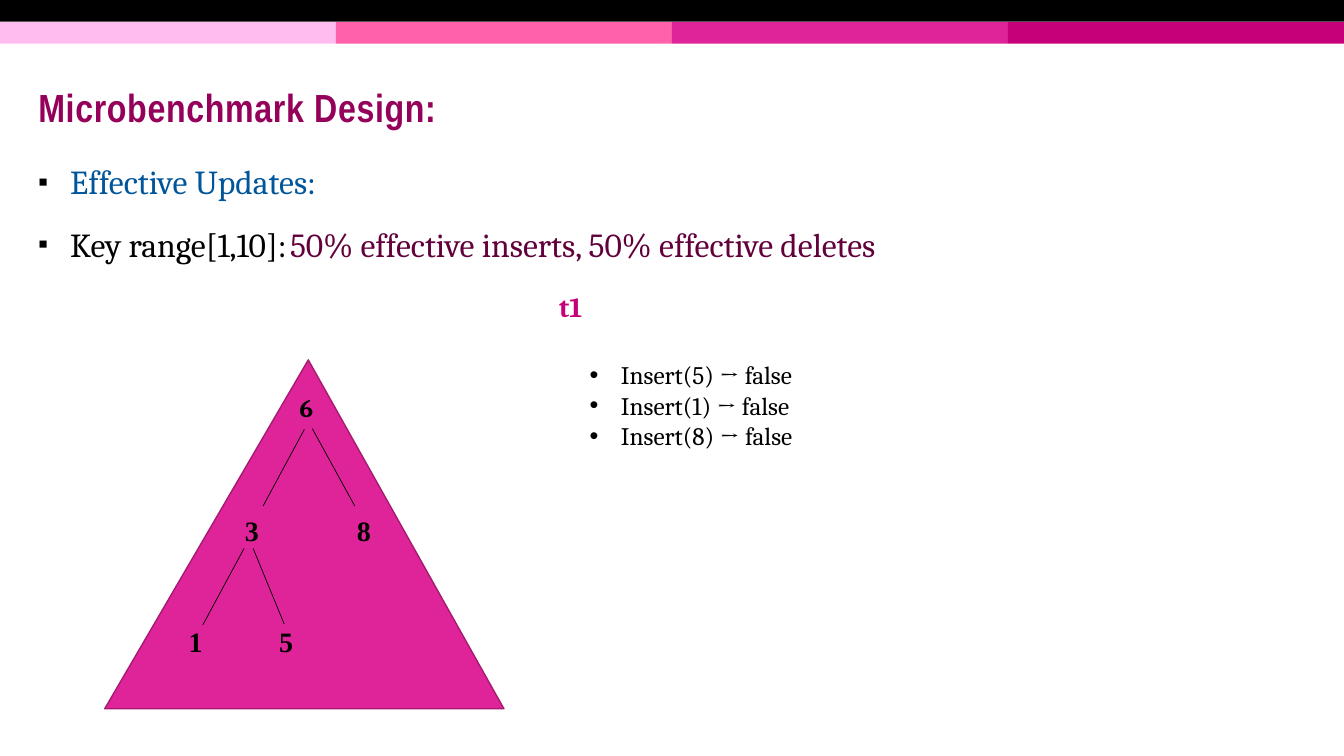
from lxml.etree import SubElement
from pptx import Presentation
from pptx.dml.color import RGBColor
from pptx.enum.shapes import MSO_CONNECTOR as Connector, MSO_SHAPE as Shape
from pptx.enum.text import MSO_ANCHOR as Anchor, MSO_AUTO_SIZE as AutoSize, PP_ALIGN as Align
from pptx.oxml.ns import qn
from pptx.util import Cm, Pt

COLORS = {
    "black": "000000", "blush": "FFBDEF", "rose": "FF62AA", "pink": "DE2498",
    "magenta": "C50078", "title": "94005A", "blue": "00569B",
    "plum": "62003C", "outline": "A41B70",
}
SERIF = "Cambria"
WIDTH, HEIGHT = 33.87, 19.05


def color(key):
    """Return the named palette colour."""
    return RGBColor.from_string(COLORS[key])


def style(run, size, key, name=SERIF, bold=False):
    """Format one run."""
    font = run.font
    font.size, font.name, font.bold = Pt(size), name, bold
    font.color.rgb = color(key)


def add_bullet(paragraph, sign, indent, percent=100):
    """Give a paragraph a hanging black bullet."""
    props = paragraph._p.get_or_add_pPr()
    props.set("marL", str(Cm(indent)))
    props.set("indent", str(-Cm(indent)))
    tint = SubElement(props, qn("a:buClr"))
    SubElement(tint, qn("a:srgbClr"), val=COLORS["black"])
    SubElement(props, qn("a:buSzPct"), val=str(percent * 1000))
    SubElement(props, qn("a:buFont"), typeface="Arial")
    SubElement(props, qn("a:buChar"), char=sign)


def add_block(slide, left, top, width, height, key, preset=Shape.RECTANGLE):
    """Add a filled shape without outline or shadow."""
    block = slide.shapes.add_shape(preset, Cm(left), Cm(top), Cm(width), Cm(height))
    block.shadow.inherit = False
    block.fill.solid()
    block.fill.fore_color.rgb = color(key)
    block.line.fill.background()
    return block


def add_text(slide, left, top, width, height, wrap=True):
    """Add an empty text box and return its frame."""
    frame = slide.shapes.add_textbox(Cm(left), Cm(top), Cm(width), Cm(height)).text_frame
    frame.word_wrap = wrap
    return frame


def add_header(slide, left, top, width, height):
    """Draw the black bar above four equal colour bands."""
    row = height / 2
    bands = ("blush", "rose", "pink", "magenta")
    band_width = width / len(bands)
    for index, key in enumerate(bands):
        add_block(slide, left + index * band_width, top + row, band_width, row, key)
    add_block(slide, left, top, width, row, "black")


def add_title(slide, left, top, width, height):
    """Place and format the title placeholder."""
    title = slide.shapes.title
    title.left, title.top, title.width, title.height = map(Cm, (left, top, width, height))
    frame = title.text_frame
    frame.text = "Microbenchmark Design:"
    frame.auto_size = AutoSize.NONE
    frame.vertical_anchor = Anchor.MIDDLE
    heading = frame.paragraphs[0]
    heading.alignment = Align.LEFT
    heading.line_spacing = 0.85
    style(heading.runs[0], 28, "title", "Arial Narrow", True)
    heading.runs[0].font._element.set("spc", "50")


def add_points(slide, left, top, width, height):
    """Write the two main bullet points."""
    frame = add_text(slide, left, top, width, height)
    points = (
        [("Effective Updates:", "blue")],
        [("Key range[1,10]:\t", "black"),
         ("50% effective inserts, 50% effective deletes", "plum")],
    )
    for index, parts in enumerate(points):
        point = frame.add_paragraph() if index else frame.paragraphs[0]
        point.space_before = Pt(8 if index else 0)
        point.space_after = Pt(8)
        add_bullet(point, "▪", 0.81, 85)
        for words, key in parts:
            run = point.add_run()
            run.text = words
            style(run, 24, key)


def add_tree(slide, left, top, width, height):
    """Draw the triangle with the search tree inside it."""
    triangle = add_block(slide, left, top, width, height, "pink", Shape.ISOSCELES_TRIANGLE)
    triangle.adjustments[0] = 0.51
    triangle.line.color.rgb = color("outline")
    triangle.line.width = Pt(1)

    serif = "Times New Roman"
    nodes = (
        ("6", 5.08, 1.19, 18, SERIF), ("3", 3.71, 4.29, 20, serif),
        ("8", 6.53, 4.29, 20, serif), ("1", 2.29, 7.09, 20, serif),
        ("5", 4.57, 7.09, 20, serif),
    )
    side = 1.1
    for key, x, y, size, name in nodes:
        frame = add_text(slide, left + x - side / 2, top + y - side / 2, side, side)
        frame.text = key
        frame.vertical_anchor = Anchor.MIDDLE
        frame.paragraphs[0].alignment = Align.CENTER
        style(frame.paragraphs[0].runs[0], size, "black", name, True)

    edges = (
        (5.03, 1.75, 3.99, 3.68), (5.23, 1.73, 6.3, 3.68),
        (3.51, 4.75, 2.47, 6.68), (3.74, 4.75, 4.52, 6.65),
    )
    for x1, y1, x2, y2 in edges:
        edge = slide.shapes.add_connector(
            Connector.STRAIGHT, Cm(left + x1), Cm(top + y1), Cm(left + x2), Cm(top + y2))
        edge.line.color.rgb = color("black")
        edge.line.width = Pt(0.5)
        SubElement(edge._element.spPr, qn("a:effectLst"))


def add_thread(slide, left, top, width, height):
    """Write the thread name and its operations."""
    name = add_text(slide, left, top, 1.55, 1.12)
    name.text = "t1"
    style(name.paragraphs[0].runs[0], 20, "magenta", bold=True)

    operations = add_text(slide, left + 0.77, top + 1.78, width - 0.77, height - 1.78, False)
    operations.text = "\n".join(f"Insert({key}) → false" for key in (5, 1, 8))
    for operation in operations.paragraphs:
        add_bullet(operation, "•", 0.79)
        style(operation.runs[0], 18, "black")


def main():
    """Build the slide and save it."""
    deck = Presentation()
    deck.slide_width, deck.slide_height = Cm(WIDTH), Cm(HEIGHT)
    slide = deck.slides.add_slide(deck.slide_layouts[5])
    add_header(slide, 0, 0, WIDTH, 1.1)
    add_title(slide, 0.71, 1.55, 32.13, 2.49)
    add_points(slide, 0.71, 3.94, 32.13, 3.2)
    add_tree(slide, 2.64, 9.07, 10.06, 8.79)
    add_thread(slide, 13.84, 7.16, 8.97, 4.35)
    deck.save("out.pptx")


if __name__ == "__main__":
    main()
